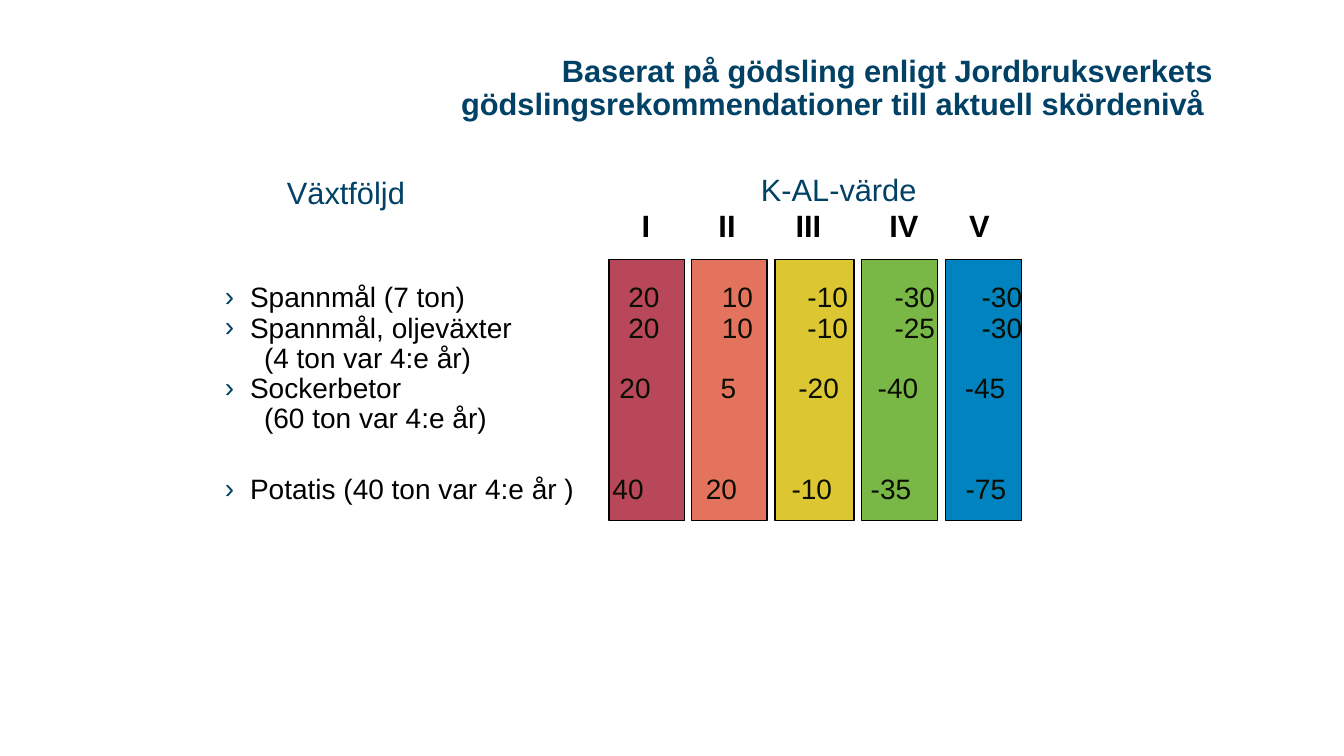
from dataclasses import dataclass
from typing import Optional

from lxml import etree
from pptx import Presentation
from pptx import util as u
from pptx.dml.color import RGBColor
from pptx.enum import shapes, text
from pptx.oxml import ns
from pptx.slide import Slide

NAVY = RGBColor(0x00, 0x41, 0x65)
BLACK = RGBColor(0x00, 0x00, 0x00)
WHITE = RGBColor(0xFF, 0xFF, 0xFF)
INK = RGBColor(0x0A, 0x0D, 0x02)
CRIMSON = RGBColor(0xA7, 0x19, 0x30)
CORAL = RGBColor(0xDC, 0x50, 0x34)
YELLOW = RGBColor(0xD4, 0xBA, 0x00)
GREEN = RGBColor(0x58, 0xA6, 0x18)
BLUE = RGBColor(0x00, 0x83, 0xBE)

FONT = "Arial"
TIGHT = 0.9
ROWS_TOP, ROWS_HEIGHT = 202.6, 160
BAR_TOP, BAR_HEIGHT = 185.5, 186.5
CLASS_TOP, CLASS_WIDTH = 147.7, 40
VALUE_GAPS = (0, 0, 21.6, 50.7)


@dataclass(frozen=True)
class Frame:
    left: float
    top: float
    width: float
    height: float


@dataclass(frozen=True)
class Line:
    words: str
    size: float = 20
    color: RGBColor = BLACK
    bold: bool = False
    align: text.PP_ALIGN = text.PP_ALIGN.LEFT
    spacing: float = 1.0
    before: float = 0
    margin: float = 0
    bullet: bool = False


@dataclass(frozen=True)
class Column:
    numeral: str
    center: float
    left: float
    width: float
    color: RGBColor
    values: tuple[int, ...]
    margins: tuple[float, ...]
    opacity: int = 80


COLUMNS = (
    Column("I", 461.4, 435, 54, CRIMSON, (20, 20, 20, 40), (13.9, 13.9, 7.5, 2.5)),
    Column("II", 519.3, 494, 54, CORAL, (10, 10, 5, 20), (21.6, 21.6, 20.7, 10.2)),
    Column("III", 577.5, 553.5, 56.5, YELLOW, (-10, -10, -20, -10),
           (23.3, 23.3, 16.8, 11.9)),
    Column("IV", 645.7, 615.5, 54, GREEN, (-30, -25, -40, -35), (23.5, 23.5, 11.5, 6.5)),
    Column("V", 699.6, 675.5, 54, BLUE, (-30, -30, -45, -75),
           (25.7, 25.7, 13.7, 14.3), 100),
)


def crop(words: str, before: float = 0) -> Line:
    return Line(words, spacing=TIGHT, before=before, margin=18, bullet=True)


def detail(words: str) -> Line:
    return Line(words, spacing=TIGHT, margin=28)


TITLE = Line(
    "Baserat på gödsling enligt Jordbruksverkets "
    "gödslingsrekommendationer till aktuell skördenivå ",
    22, NAVY, True, text.PP_ALIGN.RIGHT, TIGHT,
)
ROTATION = Line("Växtföljd", 22, NAVY, margin=25.7)
POTASSIUM = Line("K-AL-värde", 22, NAVY, align=text.PP_ALIGN.CENTER, margin=6)
CROPS = (
    crop("Spannmål (7 ton)"),
    crop("Spannmål, oljeväxter"),
    detail("(4 ton var 4:e år)"),
    crop("Sockerbetor"),
    detail("(60 ton var 4:e år)"),
    crop("Potatis (40 ton var 4:e år )", 29.1),
)


def add_bar(page: Slide, column: Column) -> None:
    box = page.shapes.add_shape(
        shapes.MSO_SHAPE.RECTANGLE,
        u.Pt(column.left), u.Pt(BAR_TOP), u.Pt(column.width), u.Pt(BAR_HEIGHT),
    )
    box.shadow.inherit = False
    box.fill.solid()
    box.fill.fore_color.rgb = column.color
    box.line.color.rgb = BLACK
    box.line.width = u.Pt(1)
    if column.opacity < 100:
        color = box.fill._xPr.find(".//" + ns.qn("a:srgbClr"))
        etree.SubElement(color, ns.qn("a:alpha"), val=str(column.opacity * 1000))


def add_text(page: Slide, frame: Frame, lines: tuple[Line, ...], inset: float = 0,
             anchor: text.MSO_ANCHOR = text.MSO_ANCHOR.TOP,
             fill: Optional[RGBColor] = None) -> None:
    box = page.shapes.add_textbox(
        u.Pt(frame.left), u.Pt(frame.top), u.Pt(frame.width), u.Pt(frame.height)
    )
    if fill is not None:
        box.fill.solid()
        box.fill.fore_color.rgb = fill
    body = box.text_frame
    body.word_wrap = True
    body.vertical_anchor = anchor
    body.margin_left = body.margin_right = u.Pt(inset)
    body.margin_top = body.margin_bottom = u.Pt(inset / 2)
    for index, line in enumerate(lines):
        para = body.add_paragraph() if index else body.paragraphs[0]
        para.add_run().text = line.words
        para.alignment = line.align
        properties = para._p.get_or_add_pPr()
        properties.set("marL", str(u.Pt(line.margin)))
        properties.set("indent", str(u.Pt(-line.margin if line.bullet else 0)))
        if line.bullet:
            tint = etree.SubElement(properties, ns.qn("a:buClr"))
            etree.SubElement(tint, ns.qn("a:srgbClr"), val=str(NAVY))
            etree.SubElement(properties, ns.qn("a:buFont"), typeface=FONT)
            etree.SubElement(properties, ns.qn("a:buChar"), char="›")
        para.line_spacing = line.spacing
        para.space_before = u.Pt(line.before)
        para.font.name = FONT
        para.font.size = u.Pt(line.size)
        para.font.bold = line.bold
        para.font.color.rgb = line.color


def add_column(page: Slide, column: Column) -> None:
    add_bar(page, column)
    numeral = Line(column.numeral, 22, bold=True, align=text.PP_ALIGN.CENTER)
    left = column.center - CLASS_WIDTH / 2
    add_text(page, Frame(left, CLASS_TOP, CLASS_WIDTH, 27), (numeral,))
    lines = tuple(
        Line(str(value), color=INK, spacing=TIGHT, before=gap, margin=margin)
        for value, gap, margin in zip(column.values, VALUE_GAPS, column.margins)
    )
    add_text(page, Frame(column.left, ROWS_TOP, column.width + 10, ROWS_HEIGHT), lines)


def main() -> None:
    deck = Presentation()
    deck.slide_width = u.Pt(960)
    deck.slide_height = u.Pt(540)
    page = deck.slides.add_slide(deck.slide_layouts[6])
    add_text(page, Frame(207.4, 36.7, 666, 54), (TITLE,), 7.2, text.MSO_ANCHOR.MIDDLE)
    add_text(page, Frame(179.3, 108, 322.6, 42.5), (ROTATION,),
             anchor=text.MSO_ANCHOR.BOTTOM, fill=WHITE)
    add_text(page, Frame(451.4, 118.1, 289.4, 60.5), (POTASSIUM,), 7.2, fill=WHITE)
    for column in COLUMNS:
        add_column(page, column)
    add_text(page, Frame(160.6, ROWS_TOP, 268, ROWS_HEIGHT), CROPS)
    deck.save("out.pptx")


if __name__ == "__main__":
    main()
